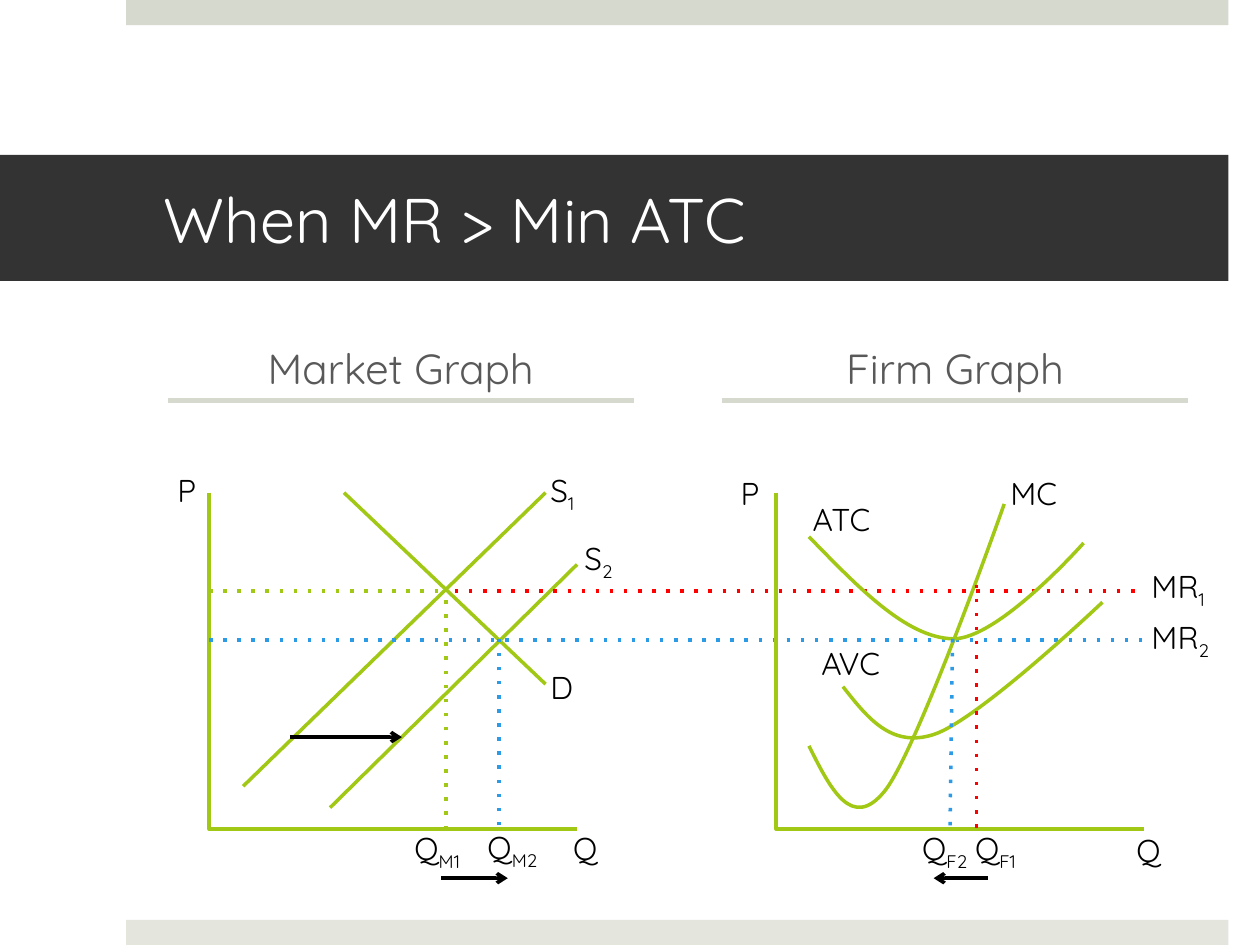
import pptx
import pptx.util
import pptx.dml.color
import pptx.enum.shapes
import pptx.enum.text
import pptx.oxml.ns
import lxml.etree

COLS, ROWS = 100, 75          # slide grid; one cell is a tenth of an inch
GREEN, RED, BLUE, BLACK = "A2C816", "FF0000", "2C9AE5", "000000"
FACE = "Quicksand"
ANCHOR = pptx.enum.text.MSO_ANCHOR
ALIGN = pptx.enum.text.PP_ALIGN


def cell(n):
    return pptx.util.Inches(n / 10)


def tint(hue):
    return pptx.dml.color.RGBColor.from_string(hue)


def add(node, tag, **atts):
    return lxml.etree.SubElement(node, pptx.oxml.ns.qn(tag), **atts)


def apply(obj, form):
    for name, val in form.items():
        setattr(obj, name, val)


def place(shape, box):
    apply(shape, dict(zip(("left", "top", "width", "height"), map(cell, box))))


def style(font, size, hue):
    apply(font, {"name": FACE, "size": pptx.util.Pt(size), "bold": False})
    font.color.rgb = tint(hue)


def stroke(shape, hue, width=2):
    shape.line.color.rgb = tint(hue)
    shape.line.width = pptx.util.Pt(width)


def line(slide, ends, hue, dot=False, head=False, width=2):
    kind = pptx.enum.shapes.MSO_CONNECTOR.STRAIGHT
    link = slide.shapes.add_connector(kind, *map(cell, ends))
    stroke(link, hue, width)
    edge = link.line._get_or_add_ln()
    if dot:
        add(edge, "a:prstDash", val="dot")
    if head:
        add(edge, "a:tailEnd", type="arrow")
    add(link._element.spPr, "a:effectLst")


def trace(slide, pts):
    """Draw an open green outline through the points."""
    first, *rest = [tuple(map(cell, p)) for p in pts]
    pen = slide.shapes.build_freeform(*first)
    pen.add_line_segments(rest, close=False)
    shape = pen.convert_to_shape()
    shape.shadow.inherit = False
    shape.fill.background()
    stroke(shape, GREEN)
    return shape


def curve(slide, pts, high):
    """Draw a chain of cubic arcs, framed to the height of the visible curve."""
    shape = trace(slide, pts)
    shape.height = cell(high)
    qn = pptx.oxml.ns.qn
    route = next(shape._element.iter(qn("a:path")))
    route.set("h", str(shape.height))
    legs = route.findall(qn("a:lnTo"))
    for k in range(0, len(legs), 3):
        arc = add(route, "a:cubicBezTo")
        for leg in legs[k:k + 3]:
            arc.append(leg[0])
            route.remove(leg)


def label(slide, x, y, wide, text, sub=""):
    shape = slide.shapes.add_textbox(*map(cell, (x, y, wide, 4)))
    frame = shape.text_frame
    apply(frame, {"word_wrap": False,
                  "auto_size": pptx.enum.text.MSO_AUTO_SIZE.SHAPE_TO_FIT_TEXT})
    for part, base in ((text, 0), (sub, -25000)):
        if part:
            run = frame.paragraphs[0].add_run()
            run.text = part
            style(run.font, 18, BLACK)
            if base:
                run.font._element.set("baseline", str(base))


def band(slide, box, hue):
    bar = slide.shapes.add_shape(pptx.enum.shapes.MSO_SHAPE.RECTANGLE, *map(cell, box))
    bar.shadow.inherit = False
    bar.fill.solid()
    bar.fill.fore_color.rgb = tint(hue)
    bar.line.fill.background()


def title(slide, box, text):
    head = slide.shapes.title
    place(head, box)
    head.fill.solid()
    head.fill.fore_color.rgb = tint("333333")
    head.text = text
    apply(head.text_frame, {"vertical_anchor": ANCHOR.MIDDLE,
                            "margin_left": cell(13), "margin_right": cell(3)})
    par = head.text_frame.paragraphs[0]
    par.alignment = ALIGN.LEFT
    style(par.runs[0].font, 36, "FFFFFF")


def heading(slide, idx, box, text):
    """Fill a body placeholder and rule a line under it."""
    x, y, wide, high = box
    body = slide.placeholders[idx]
    place(body, box)
    body.text = text
    body.text_frame.vertical_anchor = ANCHOR.BOTTOM
    par = body.text_frame.paragraphs[0]
    apply(par, {"alignment": ALIGN.CENTER, "space_before": pptx.util.Pt(20)})
    style(par.runs[0].font, 24, "595959")
    base = y + high + 0.1
    line(slide, (x + 1, base, x + wide - 1, base), "D6D9CD", width=3)


def graph(slide, box, curves, lines, labels):
    """Draw axes on the left and bottom of the box, then its parts."""
    x, y, wide, high = box
    trace(slide, [(x, y), (x, y + high), (x + wide, y + high)])
    for tall, pts in curves:
        curve(slide, [(x + a, y + b) for a, b in pts], tall)
    for (a, b, c, d), hue, *flags in lines:
        line(slide, (x + a, y + b, x + c, y + d), hue, *flags)
    for a, b, *rest in labels:
        label(slide, x + a, y + b, *rest)


def market(slide, box):
    wide, high = box[2:]
    lines = [
        ((2.7, 23.3, 26.7, 0), GREEN),
        ((26.7, 15.2, 10.7, 0), GREEN),
        ((9.6, 25, wide, 5.7), GREEN),
        ((0, 7.8, 18.8, 7.8), GREEN, True),
        ((18.8, high, 18.8, 7.8), GREEN, True),
        ((19.5, 7.8, 74.2, 7.8), RED, True),
        ((0, 11.7, 74.7, 11.7), BLUE, True),
        ((23, 26.4, 23, 11.6), BLUE, True),
        ((6.4, 19.4, 15.3, 19.4), BLACK, False, True),
        ((18.4, 30.6, 23.7, 30.6), BLACK, False, True),
    ]
    labels = [
        (-3.5, -2.2, 3.5, "P"), (27.9, 26.2, 4.2, "Q"),
        (26.1, -2.2, 4.2, "S", "1"), (28.8, 3.2, 4.2, "S", "2"),
        (26.1, 13.4, 3.9, "D"),
        (15.3, 26.2, 6.7, "Q", "M1"), (21.1, 26.1, 6.7, "Q", "M2"),
    ]
    graph(slide, box, [], lines, labels)


def firm(slide, box):
    high = box[3]
    mc = [(2.6, 20.1), (4.3, 23.5), (6, 26.9), (8.6, 23.7),
          (11.2, 20.5), (18.1, 0.9), (18.1, 0.9)]
    atc = [(2.6, 3.5), (6.5, 7.5), (10.3, 11.5), (14, 11.6),
           (17.6, 11.7), (24.4, 4), (24.4, 4)]
    avc = [(5.3, 15.4), (7.2, 17.8), (9.1, 20.3), (12.5, 19.2),
           (16, 18.1), (25.9, 8.7), (25.9, 8.7)]
    curves = [(24, mc), (8.1, atc), (10.7, avc)]
    lines = [
        ((15.9, 7.3, 15.9, high), RED, True),
        ((14, 11.6, 13.8, high), BLUE, True),
        ((16.8, 30.6, 12.5, 30.6), BLACK, False, True),
    ]
    labels = [
        (-3.8, -2, 3.5, "P"), (27.6, 26.4, 4.2, "Q"),
        (17.6, -2, 6.4, "MC"), (1.9, 0.1, 6.8, "ATC"), (2.6, 11.5, 7.4, "AVC"),
        (28.8, 5.4, 6.8, "MR", "1"), (28.8, 9.5, 6.8, "MR", "2"),
        (14.8, 26.2, 6, "Q", "F1"), (10.6, 26.2, 6, "Q", "F2"),
    ]
    graph(slide, box, curves, lines, labels)


def main():
    deck = pptx.Presentation()
    apply(deck, {"slide_width": cell(COLS), "slide_height": cell(ROWS)})
    slide = deck.slides.add_slide(deck.slide_layouts[4])
    for idx in (2, 4):
        spare = slide.placeholders[idx]._element
        spare.getparent().remove(spare)
    band(slide, (10, 0, 87.5, 2), "D6D9CD")
    band(slide, (10, ROWS - 2, 87.5, 2), "E4E6DE")
    title(slide, (0, 12.3, 97.5, 10), "When MR > Min ATC")
    pairs = ((1, "Market Graph", market), (3, "Firm Graph", firm))
    for n, (idx, text, draw) in enumerate(pairs):
        heading(slide, idx, (12.3 + 44 * n, 22.1, 39, 9.6), text)
        draw(slide, (16.6 + 45 * n, 39.1, 29.2, 26.7))
    deck.save("out.pptx")


if __name__ == "__main__":
    main()
